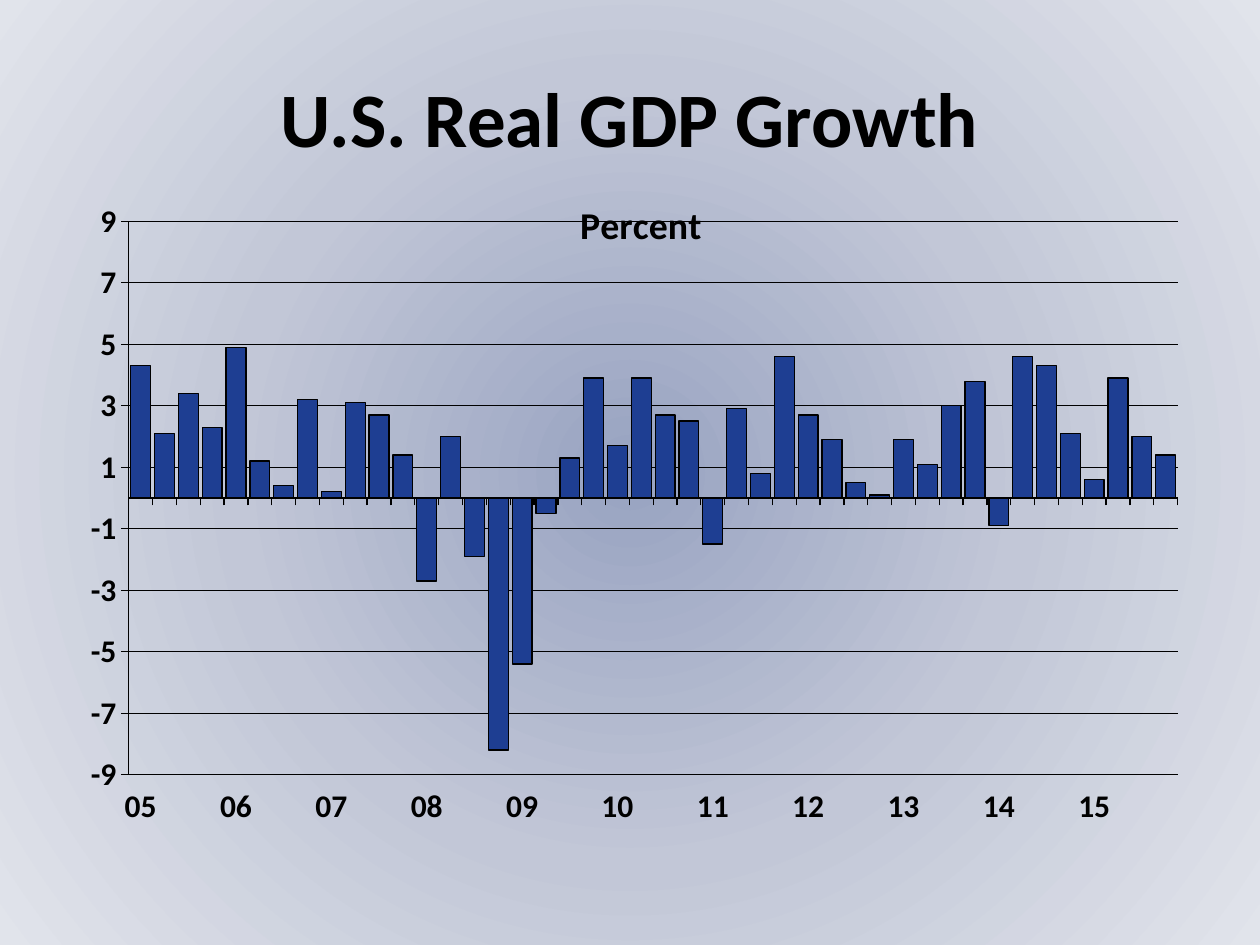
from dataclasses import dataclass

from lxml import etree
from pptx import Presentation
from pptx.chart.data import CategoryChartData
from pptx.dml.color import RGBColor
from pptx.enum.chart import XL_CHART_TYPE, XL_TICK_LABEL_POSITION, XL_TICK_MARK
from pptx.enum.text import MSO_ANCHOR, PP_ALIGN
from pptx.oxml import parse_xml
from pptx.oxml.ns import nsdecls, qn
from pptx.util import Inches, Pt

COLUMNS = XL_CHART_TYPE.COLUMN_CLUSTERED
LABELS_LOW = XL_TICK_LABEL_POSITION.LOW
TICK_OUT, TICK_NONE = XL_TICK_MARK.OUTSIDE, XL_TICK_MARK.NONE
MIDDLE, CENTER = MSO_ANCHOR.MIDDLE, PP_ALIGN.CENTER


@dataclass(frozen=True)
class Theme:
    font: str = "Calibri"
    ink: str = "000000"
    bar: str = "1E3E92"
    background: tuple = ((0, "98A3C1"), (50, "C2C7D7"), (100, "E1E4EB"))
    title_size: float = 44
    chart_title_size: float = 21.6
    chart_size: float = 18
    line_width: float = 0.75


theme = Theme()

QUARTERLY_GROWTH = {
    "05": (4.3, 2.1, 3.4, 2.3),
    "06": (4.9, 1.2, 0.4, 3.2),
    "07": (0.2, 3.1, 2.7, 1.4),
    "08": (-2.7, 2, -1.9, -8.2),
    "09": (-5.4, -0.5, 1.3, 3.9),
    "10": (1.7, 3.9, 2.7, 2.5),
    "11": (-1.5, 2.9, 0.8, 4.6),
    "12": (2.7, 1.9, 0.5, 0.1),
    "13": (1.9, 1.1, 3, 3.8),
    "14": (-0.9, 4.6, 4.3, 2.1),
    "15": (0.6, 3.9, 2, 1.4),
}


def format_font(font, size):
    values = {"name": theme.font, "size": Pt(size), "bold": True}
    for name, value in values.items():
        setattr(font, name, value)
    font.color.rgb = RGBColor.from_string(theme.ink)


def set_layout(element, **values):
    """Give a chart element a manual layout in fractions of the chart."""
    layout = element.find(qn("c:layout"))
    if layout is None:
        layout = etree.Element(qn("c:layout"))
        text = element.find(qn("c:tx"))
        element.insert(0 if text is None else 1, layout)
    for child in list(layout):
        layout.remove(child)
    manual = etree.SubElement(layout, qn("c:manualLayout"))
    for name, value in values.items():
        etree.SubElement(manual, qn(f"c:{name}")).set("val", str(value))


prs = Presentation()
prs.slide_width, prs.slide_height = Inches(10), Inches(7.5)
s = prs.slides.add_slide(prs.slide_layouts[5])

# Radial background
fill = s.background.fill
fill.gradient()
gradient = s.background._cSld.bg.bgPr.find(qn("a:gradFill"))
stops = "".join(
    f'<a:gs pos="{pos * 1000}"><a:srgbClr val="{color}"/></a:gs>'
    for pos, color in theme.background
)
gradient.getparent().replace(gradient, parse_xml(
    f'<a:gradFill {nsdecls("a")} rotWithShape="1"><a:gsLst>{stops}</a:gsLst>'
    '<a:path path="circle"><a:fillToRect l="50000" t="50000" r="50000" b="50000"/>'
    "</a:path></a:gradFill>"
))

# Title
title = s.shapes.title
title.left, title.top = Inches(0.5), Inches(0.3)
title.width, title.height = Inches(9), Inches(1.25)
tf = title.text_frame
tf.vertical_anchor = MIDDLE
p = tf.paragraphs[0]
p.alignment = CENTER
r = p.add_run()
r.text = "U.S. Real GDP Growth"
format_font(r.font, theme.title_size)

# Growth chart: each year labels its first quarter
data = CategoryChartData()
data.categories = [
    year if quarter == 0 else ""
    for year, values in QUARTERLY_GROWTH.items()
    for quarter in range(len(values))
]
data.add_series("Series 1", [v for values in QUARTERLY_GROWTH.values() for v in values])
chart = s.shapes.add_chart(
    COLUMNS, Inches(0.5), Inches(1.25), Inches(9), Inches(5.45), data
).chart
chart.has_legend = False
format_font(chart.font, theme.chart_size)

p = chart.chart_title.text_frame.paragraphs[0]
r = p.add_run()
r.text = "Percent"
format_font(r.font, theme.chart_title_size)
chart.chart_title.include_in_layout = True
set_layout(chart.chart_title._element, xMode="edge", yMode="edge", x=0.45, y=0.05)

plot = chart.plots[0]
plot.gap_width, plot.overlap, plot.vary_by_categories = 20, 70, False
bars = plot.series[0]
bars.invert_if_negative = False
bars.format.fill.solid()
bars.format.fill.fore_color.rgb = RGBColor.from_string(theme.bar)
set_layout(
    chart._chartSpace.chart.plotArea, layoutTarget="inner", xMode="edge", yMode="edge",
    x=0.058, y=0.093, w=0.925, h=0.806,
)

cat_axis, val_axis = chart.category_axis, chart.value_axis
cat_axis.tick_label_position = LABELS_LOW
labels_skip = cat_axis._element.find(qn("c:noMultiLvlLbl"))
for name in ("tickLblSkip", "tickMarkSkip"):
    skip = etree.Element(qn(f"c:{name}"))
    skip.set("val", "1")
    labels_skip.addprevious(skip)
val_axis.minimum_scale, val_axis.maximum_scale, val_axis.major_unit = -9, 9, 2
val_axis.has_major_gridlines = True
for axis in (cat_axis, val_axis):
    axis.major_tick_mark, axis.minor_tick_mark = TICK_OUT, TICK_NONE
    format_font(axis.tick_labels.font, theme.chart_size)

for item in (cat_axis, val_axis, val_axis.major_gridlines, bars):
    item.format.line.color.rgb = RGBColor.from_string(theme.ink)
    item.format.line.width = Pt(theme.line_width)

prs.save("out.pptx")
